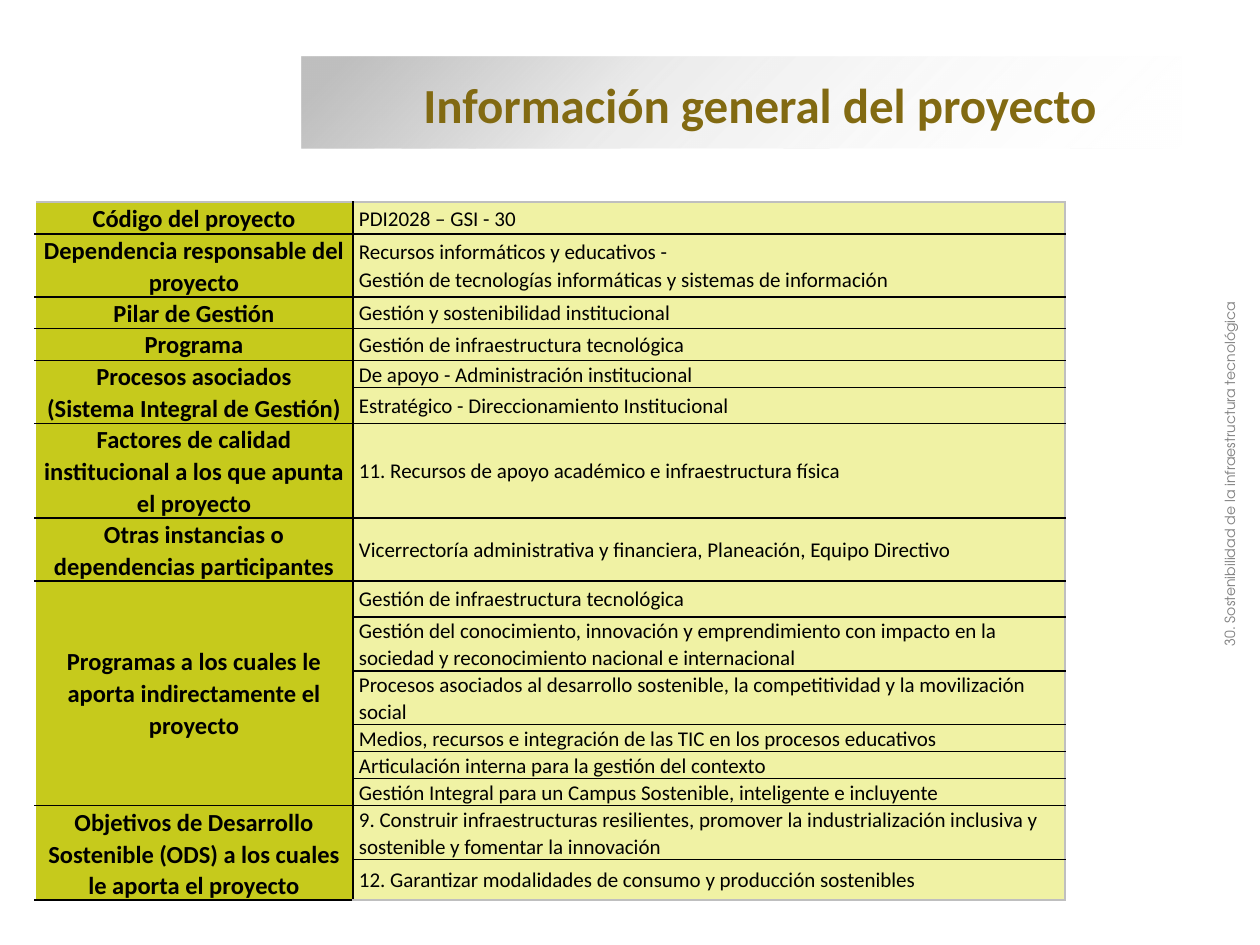
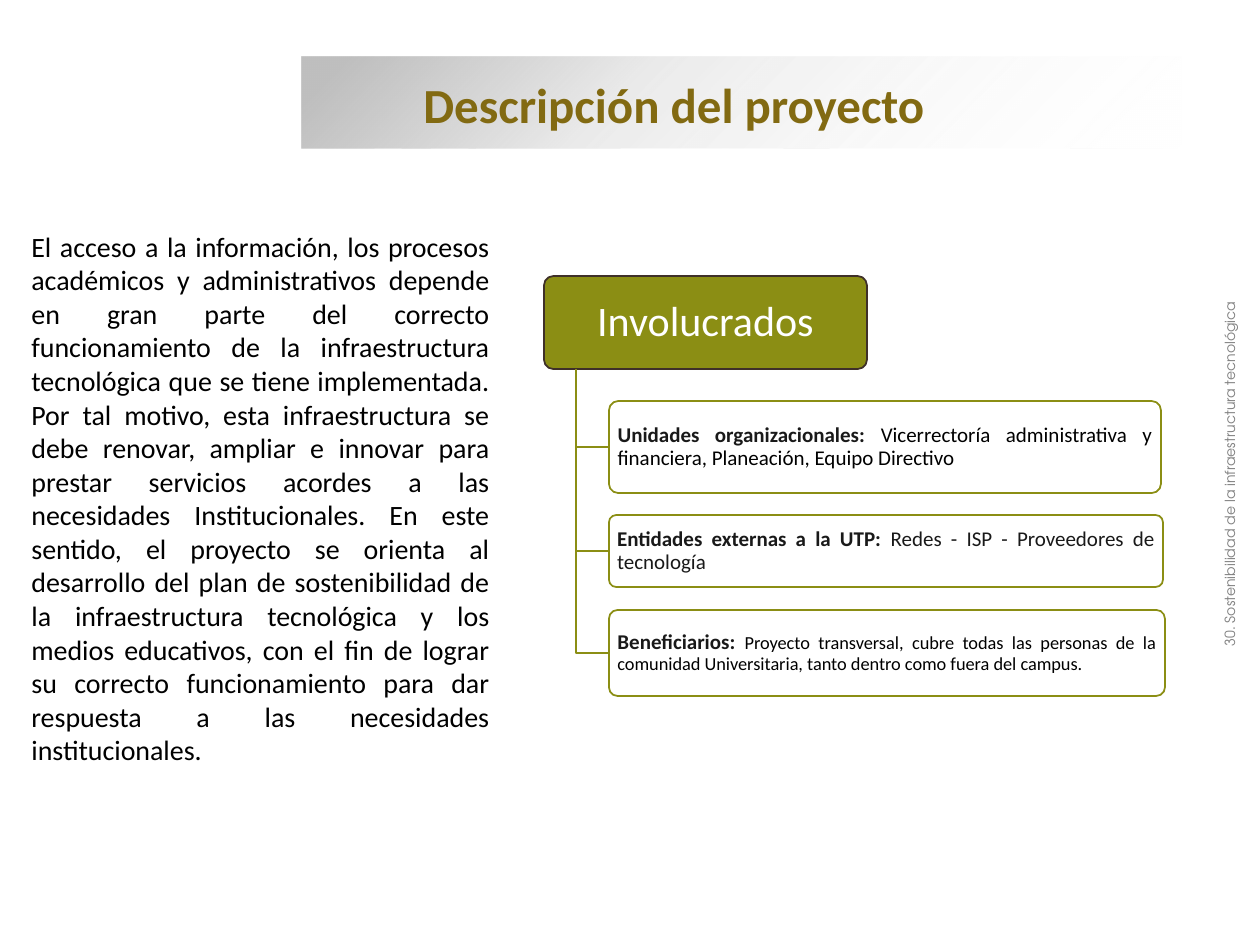
from typing import NamedTuple

import pptx
import pptx.util
import pptx.dml.color
import pptx.enum.shapes
import pptx.enum.text
import pptx.oxml
import pptx.oxml.ns

RGB = pptx.dml.color.RGBColor
Pt = pptx.util.Pt
ALIGN = pptx.enum.text.PP_ALIGN
ANCHOR = pptx.enum.text.MSO_ANCHOR
SHAPE = pptx.enum.shapes.MSO_SHAPE

# Shared look
SCALE = 914400 / 126
FONT = "Calibri"
SIDE_FONT = "TeX Gyre Adventor"
BLACK = RGB(0x00, 0x00, 0x00)
WHITE = RGB(0xFF, 0xFF, 0xFF)
INK = RGB(0x19, 0x19, 0x19)
GOLD = RGB(0x82, 0x6A, 0x12)
GRAY = RGB(0x80, 0x80, 0x80)
SILVER = RGB(0xBF, 0xBF, 0xBF)
LIME = RGB(0xC6, 0xCA, 0x1C)
CREAM = RGB(0xF0, 0xF2, 0xA4)
OLIVE = RGB(0x8B, 0x8E, 0x14)
BROWN = RGB(0x3F, 0x30, 0x29)


class Box(NamedTuple):
    left: int
    top: int
    width: int
    height: int


class Style(NamedTuple):
    size: float
    color: RGB = BLACK
    bold: bool = False
    align: ALIGN = ALIGN.LEFT
    lead: float = 1.0
    font: str = FONT


class Value(NamedTuple):
    text: str
    height: int


class Fact(NamedTuple):
    label: str
    values: list[Value]


class Group(NamedTuple):
    box: Box
    label: str
    text: str
    color: RGB = BLACK
    size: float = 12


BAND = Box(302, 57, 880, 91)
TITLE = Box(411, 68, 781, 72)
SIDE = Box(925, 459, 610, 30)
TABLE = Box(35, 202, 1030, 697)
COLS = (318, 712)
STORY = Box(19, 223, 483, 556)
HEAD = Box(544, 276, 323, 93)
TRUNK = 576

TITLE_STYLE = Style(28, GOLD, True)
SIDE_STYLE = Style(8, GRAY, align=ALIGN.CENTER, font=SIDE_FONT)
LABEL_STYLE = Style(14, bold=True, align=ALIGN.CENTER, lead=1.07)
VALUE_STYLE = Style(12, lead=1.07)
STORY_STYLE = Style(16, align=ALIGN.JUSTIFY)
HEAD_STYLE = Style(24, WHITE, align=ALIGN.CENTER, lead=0.9)

SIDE_TEXT = "30. Sostenibilidad de la infraestructura tecnológica"

FACTS = [
    Fact("Código del proyecto", [Value("PDI2028 – GSI - 30", 32)]),
    Fact("Dependencia responsable del proyecto", [
        Value("Recursos informáticos y educativos -\n"
              "Gestión de tecnologías informáticas y sistemas de información", 63)]),
    Fact("Pilar de Gestión", [Value("Gestión y sostenibilidad institucional", 31)]),
    Fact("Programa", [Value("Gestión de infraestructura tecnológica", 32)]),
    Fact("Procesos asociados\n(Sistema Integral de Gestión)", [
        Value("De apoyo - Administración institucional", 27),
        Value("Estratégico - Direccionamiento Institucional", 36)]),
    Fact("Factores de calidad institucional a los que apunta el proyecto", [
        Value("11. Recursos de apoyo académico e infraestructura física", 94)]),
    Fact("Otras instancias o dependencias participantes", [
        Value("Vicerrectoría administrativa y financiera, Planeación, "
              "Equipo Directivo", 63)]),
    Fact("Programas a los cuales le aporta indirectamente el proyecto", [
        Value("Gestión de infraestructura tecnológica", 36),
        Value("Gestión del conocimiento, innovación y emprendimiento con impacto "
              "en la sociedad y reconocimiento nacional e internacional", 54),
        Value("Procesos asociados al desarrollo sostenible, la competitividad y "
              "la movilización social", 54),
        Value("Medios, recursos e integración de las TIC en los procesos educativos", 27),
        Value("Articulación interna para la gestión del contexto", 27),
        Value("Gestión Integral para un Campus Sostenible, inteligente e incluyente", 27)]),
    Fact("Objetivos de Desarrollo Sostenible (ODS) a los cuales le aporta el proyecto", [
        Value("9. Construir infraestructuras resilientes, promover la industrialización "
              "inclusiva y sostenible y fomentar la innovación", 54),
        Value("12. Garantizar modalidades de consumo y producción sostenibles", 40)]),
]

STORY_TEXT = (
    "El acceso a la información, los procesos académicos y administrativos depende en "
    "gran parte del correcto funcionamiento de la infraestructura tecnológica que se "
    "tiene implementada. Por tal motivo, esta infraestructura se debe renovar, ampliar "
    "e innovar para prestar servicios acordes a las necesidades Institucionales. En este "
    "sentido, el proyecto se orienta al desarrollo del plan de sostenibilidad de la "
    "infraestructura tecnológica y los medios educativos, con el fin de lograr su "
    "correcto funcionamiento para dar respuesta a las necesidades institucionales.")

GROUPS = [
    Group(Box(609, 401, 552, 92), "Unidades organizacionales: ",
          "Vicerrectoría administrativa y financiera, Planeación, Equipo Directivo"),
    Group(Box(609, 515, 554, 72), "Entidades externas a la UTP: ",
          "Redes - ISP - Proveedores de tecnología", INK),
    Group(Box(609, 610, 556, 86), "Beneficiarios: ",
          "Proyecto transversal, cubre todas las personas de la comunidad Universitaria, "
          "tanto dentro como fuera del campus.", size=10.5),
]


# Helpers
def px(n: float) -> int:
    return round(n * SCALE)


def emu(box: Box) -> list[int]:
    return [px(n) for n in box]


def pad(item, side: int, edge: int) -> None:
    """Set the inner margins of a cell or a text frame."""
    item.margin_left = item.margin_right = px(side)
    item.margin_top = item.margin_bottom = px(edge)


def format_para(para, style: Style) -> None:
    para.alignment = style.align
    para.line_spacing = style.lead
    font = para.font
    font.name, font.size, font.bold = style.font, Pt(style.size), style.bold
    font.color.rgb = style.color


def write(frame, text: str, style: Style) -> None:
    frame.word_wrap = True
    frame.text = text
    for para in frame.paragraphs:
        format_para(para, style)


def add_text(slide, box: Box, text: str, style: Style, anchor=ANCHOR.TOP):
    shape = slide.shapes.add_textbox(*emu(box))
    write(shape.text_frame, text, style)
    shape.text_frame.vertical_anchor = anchor
    return shape


def add_panel(slide, box: Box, fill: RGB, line: RGB):
    shape = slide.shapes.add_shape(SHAPE.ROUNDED_RECTANGLE, *emu(box))
    shape.adjustments[0] = 0.1
    shape.shadow.inherit = False
    shape.fill.solid()
    shape.fill.fore_color.rgb = fill
    shape.line.color.rgb = line
    shape.line.width = Pt(1)
    frame = shape.text_frame
    frame.word_wrap = True
    frame.vertical_anchor = ANCHOR.MIDDLE
    pad(frame, 6, 5)
    return shape


def add_band(slide) -> None:
    band = slide.shapes.add_shape(SHAPE.RECTANGLE, *emu(BAND))
    band.shadow.inherit = False
    band.line.fill.background()
    band.fill.gradient()
    stops = "".join(
        f'<a:gs pos="{pos}000"><a:srgbClr val="{color}">'
        f'<a:alpha val="{alpha}000"/></a:srgbClr></a:gs>'
        for pos, color, alpha in ((5, SILVER, 100), (37, SILVER, 31), (100, WHITE, 0)))
    grad = pptx.oxml.parse_xml(
        f'<a:gradFill {pptx.oxml.ns.nsdecls("a")} rotWithShape="1">'
        f'<a:gsLst>{stops}</a:gsLst><a:lin ang="2700000" scaled="0"/></a:gradFill>')
    props = band.element.spPr
    props.replace(props.find(pptx.oxml.ns.qn("a:gradFill")), grad)


def add_page(deck, title: str):
    """Start a slide with its band, title and side note."""
    slide = deck.slides.add_slide(deck.slide_layouts[6])
    add_band(slide)
    add_text(slide, TITLE, title, TITLE_STYLE, ANCHOR.MIDDLE)
    add_text(slide, SIDE, SIDE_TEXT, SIDE_STYLE).rotation = 270
    return slide


def set_edges(cell, edges: dict[str, RGB]) -> None:
    props = cell._tc.get_or_add_tcPr()
    for side, color in edges.items():
        props.append(pptx.oxml.parse_xml(
            f'<a:ln{side} {pptx.oxml.ns.nsdecls("a")} w="12700"><a:solidFill>'
            f'<a:srgbClr val="{color}"/></a:solidFill></a:ln{side}>'))


def add_facts(slide) -> None:
    values = [value for fact in FACTS for value in fact.values]
    table = slide.shapes.add_table(len(values), len(COLS), *emu(TABLE)).table
    table.first_row = table.horz_banding = False
    for col, width in zip(table.columns, COLS):
        col.width = px(width)

    # Rows, edges and fills
    last = len(values) - 1
    for r, value in enumerate(values):
        table.rows[r].height = px(value.height)
        top = BLACK if r else SILVER
        base = BLACK if r < last else SILVER
        for c, fill in enumerate((LIME, CREAM)):
            cell = table.cell(r, c)
            sides = {"R": SILVER} if c else {"R": BLACK}
            if c:
                sides = {"L": BLACK, **sides}
            set_edges(cell, {**sides, "T": top, "B": base})
            cell.fill.solid()
            cell.fill.fore_color.rgb = fill
            cell.vertical_anchor = ANCHOR.MIDDLE
            pad(cell, 6 if c else 5, 0)
        write(table.cell(r, 1).text_frame, value.text, VALUE_STYLE)

    # Labels, merged over their values
    row = 0
    for fact in FACTS:
        end = row + len(fact.values) - 1
        cell = table.cell(row, 0)
        if end > row:
            cell.merge(table.cell(end, 0))
        write(cell.text_frame, fact.label, LABEL_STYLE)
        row = end + 1


def add_branch(slide, box: Box) -> None:
    """Draw the elbow from the head down to the middle of a box."""
    mid = box.top + box.height // 2
    pen = slide.shapes.build_freeform(TRUNK, HEAD.top + HEAD.height, scale=SCALE)
    pen.add_line_segments([(TRUNK, mid), (box.left, mid)], close=False)
    shape = pen.convert_to_shape()
    shape.shadow.inherit = False
    shape.fill.background()
    shape.line.color.rgb = OLIVE
    shape.line.width = Pt(1)


def add_group(slide, group: Group) -> None:
    add_branch(slide, group.box)
    panel = add_panel(slide, group.box, WHITE, OLIVE)
    para = panel.text_frame.paragraphs[0]
    format_para(para, Style(group.size, group.color, align=ALIGN.JUSTIFY, lead=0.9))
    label = para.add_run()
    label.text = group.label
    label.font.bold = True
    label.font.size = Pt(12)
    label.font.color.rgb = INK
    para.add_run().text = group.text


def main() -> None:
    deck = pptx.Presentation()
    deck.slide_width, deck.slide_height = px(1260), px(945)

    # General data
    add_facts(add_page(deck, "Información general del proyecto"))

    # Description and people involved
    slide = add_page(deck, "Descripción del proyecto")
    add_text(slide, STORY, STORY_TEXT, STORY_STYLE)
    head = add_panel(slide, HEAD, OLIVE, BROWN)
    write(head.text_frame, "Involucrados", HEAD_STYLE)
    for group in GROUPS:
        add_group(slide, group)

    deck.save("out.pptx")


if __name__ == "__main__":
    main()
